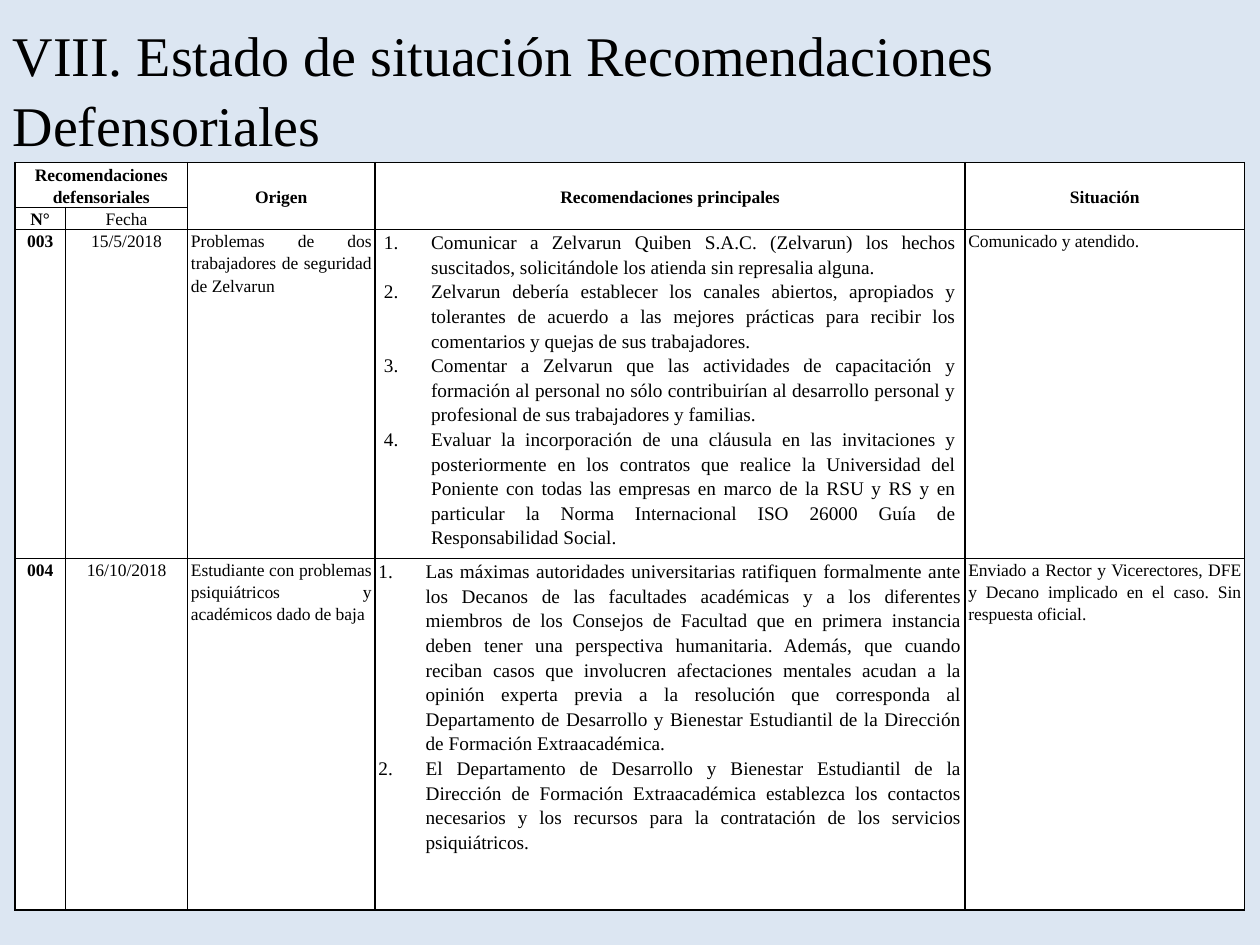
from lxml import etree
from pptx import Presentation
from pptx.dml.color import RGBColor
from pptx.enum import text
from pptx.oxml import ns
from pptx.util import Cm, Pt

FONT = "Times New Roman"
LEFT, CENTER, JUSTIFY = text.PP_ALIGN.LEFT, text.PP_ALIGN.CENTER, text.PP_ALIGN.JUSTIFY


def paint(color, value):
    color.rgb = RGBColor.from_string(value)


def style(p, size, bold, align, spacing):
    p.alignment = align
    p.line_spacing = spacing
    for r in p.runs:
        r.font.name = FONT
        r.font.size = Pt(size)
        r.font.bold = bold
        paint(r.font.color, "000000")


prs = Presentation()
prs.slide_width, prs.slide_height = Cm(25.4), Cm(19.05)
s = prs.slides.add_slide(prs.slide_layouts[5])
s.background.fill.solid()
paint(s.background.fill.fore_color, "DCE6F2")

# Title
title = s.shapes.title
title.left, title.top, title.width, title.height = Cm(0), Cm(0), Cm(25.4), Cm(3.53)
tf = title.text_frame
tf.text = "VIII. Estado de situación Recomendaciones Defensoriales"
tf.vertical_anchor = text.MSO_ANCHOR.MIDDLE
style(tf.paragraphs[0], 32, False, LEFT, 1.04)

# Table contents; a list is a numbered cell, None is covered by a merge
rows = [
    ["Recomendaciones defensoriales", None, "Origen", "Recomendaciones principales", "Situación"],
    ["N°", "Fecha", None, None, None],
    ["003", "15/5/2018", "Problemas de dos trabajadores de seguridad de Zelvarun", [
        "Comunicar a Zelvarun Quiben S.A.C. (Zelvarun) los hechos suscitados, "
        "solicitándole los atienda sin represalia alguna.",
        "Zelvarun debería establecer los canales abiertos, apropiados y tolerantes de acuerdo "
        "a las mejores prácticas para recibir los comentarios y quejas de sus trabajadores.",
        "Comentar a Zelvarun que las actividades de capacitación y formación al personal no sólo "
        "contribuirían al desarrollo personal y profesional de sus trabajadores y familias.",
        "Evaluar la incorporación de una cláusula en las invitaciones y posteriormente en los "
        "contratos que realice la Universidad del Poniente con todas las empresas en marco de la "
        "RSU y RS y en particular la Norma Internacional ISO 26000 Guía de Responsabilidad Social.",
    ], "Comunicado y atendido."],
    ["004", "16/10/2018", "Estudiante con problemas psiquiátricos y académicos dado de baja", [
        "Las máximas autoridades universitarias ratifiquen formalmente ante los Decanos de las "
        "facultades académicas y a los diferentes miembros de los Consejos de Facultad que en "
        "primera instancia deben tener una perspectiva humanitaria. Además, que cuando reciban "
        "casos que involucren afectaciones mentales acudan a la opinión experta previa a la "
        "resolución que corresponda al Departamento de Desarrollo y Bienestar Estudiantil de la "
        "Dirección de Formación Extraacadémica.",
        "El Departamento de Desarrollo y Bienestar Estudiantil de la Dirección de Formación "
        "Extraacadémica establezca los contactos necesarios y los recursos para la contratación "
        "de los servicios psiquiátricos.",
    ], "Enviado a Rector y Vicerectores, DFE y Decano implicado en el caso. Sin respuesta oficial."],
]
widths = [1.02, 2.46, 3.78, 11.89, 5.64]
heights = [0.89, 0.44, 6.63, 7.09]

# Table grid and merged headings
table = s.shapes.add_table(len(heights), len(widths), Cm(0.3), Cm(3.28),
                           Cm(sum(widths)), Cm(sum(heights))).table
table.first_row = table.horz_banding = False
for col, w in zip(table.columns, widths):
    col.width = Cm(w)
for row, h in zip(table.rows, heights):
    row.height = Cm(h)
table.cell(0, 0).merge(table.cell(0, 1))
for j in (2, 3, 4):
    table.cell(0, j).merge(table.cell(1, j))

# Heavier rules around the table and beside the main column
heavy_cols, heavy_rows = {0, 3, 4, 5}, {0, 4}

for i, values in enumerate(rows):
    for j, value in enumerate(values):
        cell = table.cell(i, j)
        if value is None:
            continue

        # Borders and fill
        tcPr = cell._tc.get_or_add_tcPr()
        edges = {"lnL": j in heavy_cols, "lnR": j + 1 in heavy_cols,
                 "lnT": i in heavy_rows, "lnB": i + 1 in heavy_rows}
        for tag, heavy in edges.items():
            ln = etree.SubElement(tcPr, ns.qn("a:" + tag), w=str(Pt(1 if heavy else 0.5)))
            fill = etree.SubElement(ln, ns.qn("a:solidFill"))
            etree.SubElement(fill, ns.qn("a:srgbClr"), val="000000")
        cell.fill.solid()
        paint(cell.fill.fore_color, "FFFFFF")

        # Margins and anchor
        numbered = isinstance(value, list)
        cell.margin_left = cell.margin_right = Cm(0.18 if numbered and i == 2 else 0.07)
        cell.margin_top = cell.margin_bottom = 0
        cell.vertical_anchor = text.MSO_ANCHOR.MIDDLE if i == 0 else text.MSO_ANCHOR.TOP

        # Text
        cell.text_frame.text = "\n".join(value) if numbered else value
        for p in cell.text_frame.paragraphs:
            style(p, 11 if numbered else 10, i == 0 or j == 0,
                  CENTER if i < 2 or j < 2 else JUSTIFY, 1.15)
            if numbered:
                pPr = p._p.get_or_add_pPr()
                pPr.set("marL", str(Cm(0.95)))
                pPr.set("indent", str(-Cm(0.95)))
                etree.SubElement(pPr, ns.qn("a:buAutoNum"), type="arabicPeriod")

prs.save("out.pptx")
